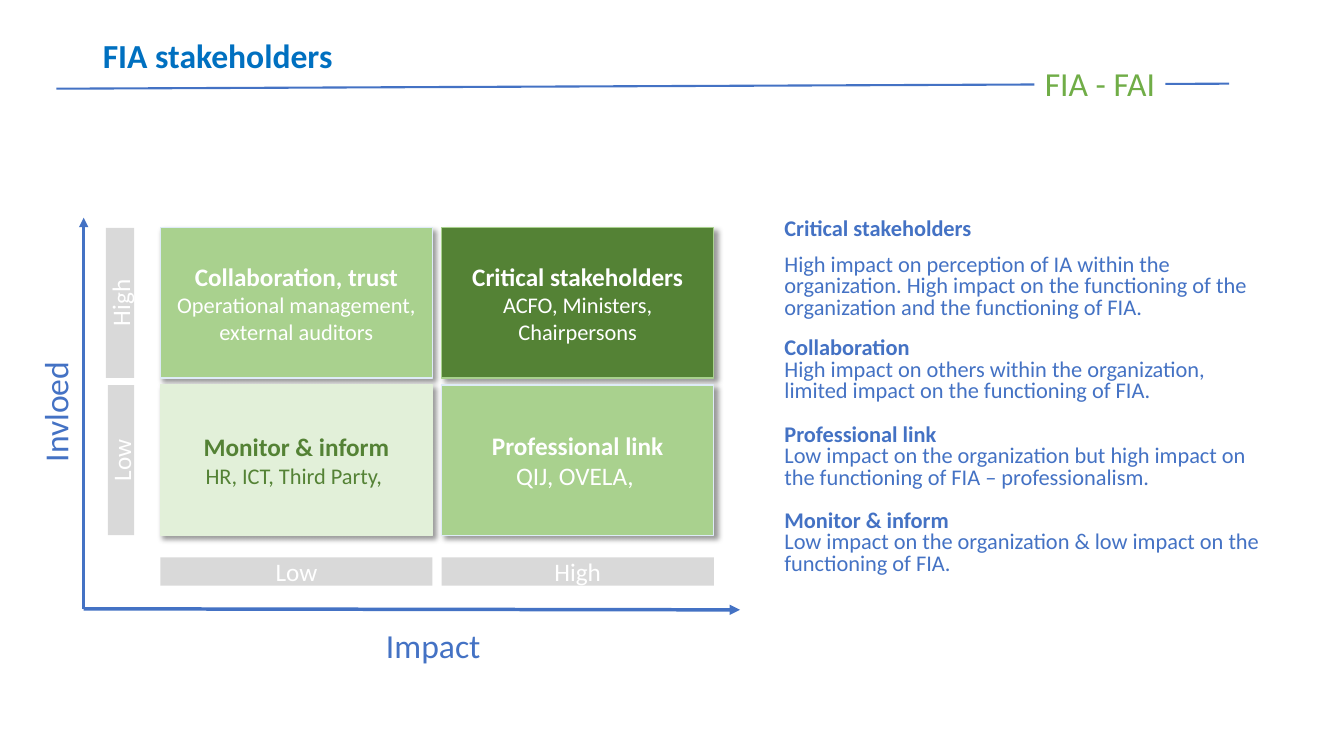
from dataclasses import dataclass

from lxml import etree
from pptx import Presentation
from pptx import util as u
from pptx.dml import color
from pptx.enum import shapes, text
from pptx.oxml import ns


@dataclass(frozen=True)
class Theme:
    font: str = "Calibri"
    blue: str = "4472C4"
    title: str = "0070C0"
    brand: str = "70AD47"
    dark: str = "548235"
    mid: str = "A9D18E"
    pale: str = "E2F0D9"
    edge: str = "DEEBF7"
    grey: str = "D9D9D9"
    white: str = "FFFFFF"
    big: int = 24
    head: int = 18
    body: int = 16


T = Theme()

# Matrix grid
COLS = (1.59, 4.38)
ROWS = (2.26, 3.82)
WIDE, HIGH = 2.7, 1.49

# Row, column, fill, edge, text colour, heading, detail, detail size
CELLS = [
    (0, 0, T.mid, T.edge, T.white, "Collaboration, trust",
     "Operational management, external auditors", T.body),
    (0, 1, T.dark, T.mid, T.white, "Critical stakeholders",
     "ACFO, Ministers, Chairpersons", T.body),
    (1, 0, T.pale, T.pale, T.dark, "Monitor & inform",
     "HR, ICT, Third Party, ", T.body),
    (1, 1, T.mid, T.edge, T.white, "Professional link",
     "QIJ, OVELA, ", T.head),
]

# Heading, space above it, detail, space above it
NOTES = [
    ("Critical stakeholders", 10,
     "High impact on perception of IA within the organization. High impact "
     "on the functioning of the organization and the functioning of FIA.", 10),
    ("Collaboration", 13.5,
     "High impact on others within the organization, limited impact on the "
     "functioning of FIA.", 0),
    ("Professional link", 15.5,
     "Low impact on the organization but high impact on the functioning of "
     "FIA – professionalism.", 0),
    ("Monitor & inform", 15.5,
     "Low impact on the organization & low impact on the functioning of FIA.",
     0),
]


def rgb(code):
    return color.RGBColor.from_string(code)


def place(item, left, top, width, height):
    item.left, item.top = u.Inches(left), u.Inches(top)
    item.width, item.height = u.Inches(width), u.Inches(height)


def write(frame, lines, hue, align=text.PP_ALIGN.LEFT):
    """Fill a frame with (words, size, bold) lines."""
    paras = []
    for i, (words, size, bold) in enumerate(lines):
        para = frame.paragraphs[0] if i == 0 else frame.add_paragraph()
        para.text = words
        para.alignment = align
        para.font.name, para.font.size = T.font, u.Pt(size)
        para.font.bold, para.font.color.rgb = bold, rgb(hue)
        paras.append(para)
    return paras


def line(slide, start, end, width, arrow=False):
    ends = [u.Inches(n) for n in (*start, *end)]
    link = slide.shapes.add_connector(shapes.MSO_CONNECTOR.STRAIGHT, *ends)
    link.line.color.rgb, link.line.width = rgb(T.blue), u.Pt(width)
    if arrow:
        tip = etree.SubElement(link.line._get_or_add_ln(), ns.qn("a:tailEnd"))
        tip.set("type", "triangle")
    etree.SubElement(link._element.spPr, ns.qn("a:effectLst"))


def block(slide, at, fill, lines, hue, edge=None):
    """Add a plain rectangle with centred text."""
    box = slide.shapes.add_shape(shapes.MSO_SHAPE.RECTANGLE,
                                 *[u.Inches(n) for n in at])
    box.shadow.inherit = False
    box.fill.solid()
    box.fill.fore_color.rgb = rgb(fill)
    if edge:
        box.line.color.rgb, box.line.width = rgb(edge), u.Pt(1)
    else:
        box.line.fill.background()
    box.text_frame.word_wrap = True
    box.text_frame.vertical_anchor = text.MSO_ANCHOR.MIDDLE
    write(box.text_frame, lines, hue, text.PP_ALIGN.CENTER)
    return box


def shade(box):
    """Give a shape a soft shadow to the lower right."""
    glow = box._element.spPr.find(ns.qn("a:effectLst"))
    drop = etree.SubElement(glow, ns.qn("a:outerShdw"),
                            blurRad=str(u.Pt(4)), dist=str(u.Pt(3)),
                            dir="2700000", algn="tl", rotWithShape="0")
    tint = etree.SubElement(drop, ns.qn("a:srgbClr"), val="000000")
    etree.SubElement(tint, ns.qn("a:alpha"), val="40000")


def label(slide, at, words, turn=0):
    box = slide.shapes.add_textbox(*[u.Inches(n) for n in at])
    box.rotation = turn
    box.text_frame.word_wrap = False
    box.text_frame.auto_size = text.MSO_AUTO_SIZE.SHAPE_TO_FIT_TEXT
    write(box.text_frame, [(words, T.big, False)], T.blue)


def header(slide):
    line(slide, (0.56, 0.88), (12.19, 0.83), 1.5)
    brand = block(slide, (10.26, 0.57, 1.3, 0.5), T.white,
                  [("FIA - FAI", T.big, False)], T.brand)
    brand.text_frame.word_wrap = False
    title = slide.shapes.title
    place(title, 0.92, 0.4, 11.5, 0.35)
    frame = title.text_frame
    frame.auto_size = text.MSO_AUTO_SIZE.NONE
    frame.vertical_anchor = text.MSO_ANCHOR.MIDDLE
    write(frame, [("FIA stakeholders", T.big, True)],
          T.title)[0].line_spacing = 0.9


def notes(slide):
    body = slide.placeholders[1]
    place(body, 7.68, 2.13, 5.02, 3.95)
    body.text_frame.auto_size = text.MSO_AUTO_SIZE.NONE
    lines, gaps = [], []
    for head, above, detail, gap in NOTES:
        lines += [(head, T.body, True), (detail, T.body, False)]
        gaps += [above, gap]
    for para, gap in zip(write(body.text_frame, lines, T.blue), gaps):
        para.line_spacing, para.space_before = 0.8, u.Pt(gap)
        # No bullet, no indent
        props = para._p.get_or_add_pPr()
        props.set("marL", "0")
        props.set("indent", "0")
        props.insert_element_before(
            etree.Element(ns.qn("a:buNone")), "a:tabLst", "a:defRPr")


def matrix(slide):
    for row, col, fill, edge, hue, head, detail, size in CELLS:
        lines = [(head, T.head, True), (detail, size, False)]
        shade(block(slide, (COLS[col], ROWS[row], WIDE, HIGH),
                    fill, lines, hue, edge))
    # Scale strips below and to the left
    for left, words in zip(COLS, ("Low", "High")):
        block(slide, (left, 5.53, WIDE, 0.28), T.grey,
              [(words, T.head, False)], T.white)
    for left, top, width, words in ((1.05, ROWS[0], 0.28, "High"),
                                    (1.07, ROWS[1], 0.26, "Low")):
        strip = block(slide, (left, top, width, HIGH), T.grey,
                      [(words, T.head, False)], T.white)
        strip.text_frame._txBody.bodyPr.set("vert", "vert270")


def axes(slide):
    line(slide, (0.83, 6.04), (7.34, 6.05), 2.5, arrow=True)
    line(slide, (0.83, 6.04), (0.83, 2.16), 2.25, arrow=True)
    label(slide, (3.73, 6.15, 1.15, 0.5), "Impact")
    label(slide, (-0.06, 3.83, 1.21, 0.5), "Invloed", turn=270)


def main():
    deck = Presentation()
    deck.slide_width, deck.slide_height = u.Inches(13.33), u.Inches(7.5)
    slide = deck.slides.add_slide(deck.slide_layouts[1])
    header(slide)
    notes(slide)
    matrix(slide)
    axes(slide)
    deck.save("out.pptx")


if __name__ == "__main__":
    main()
